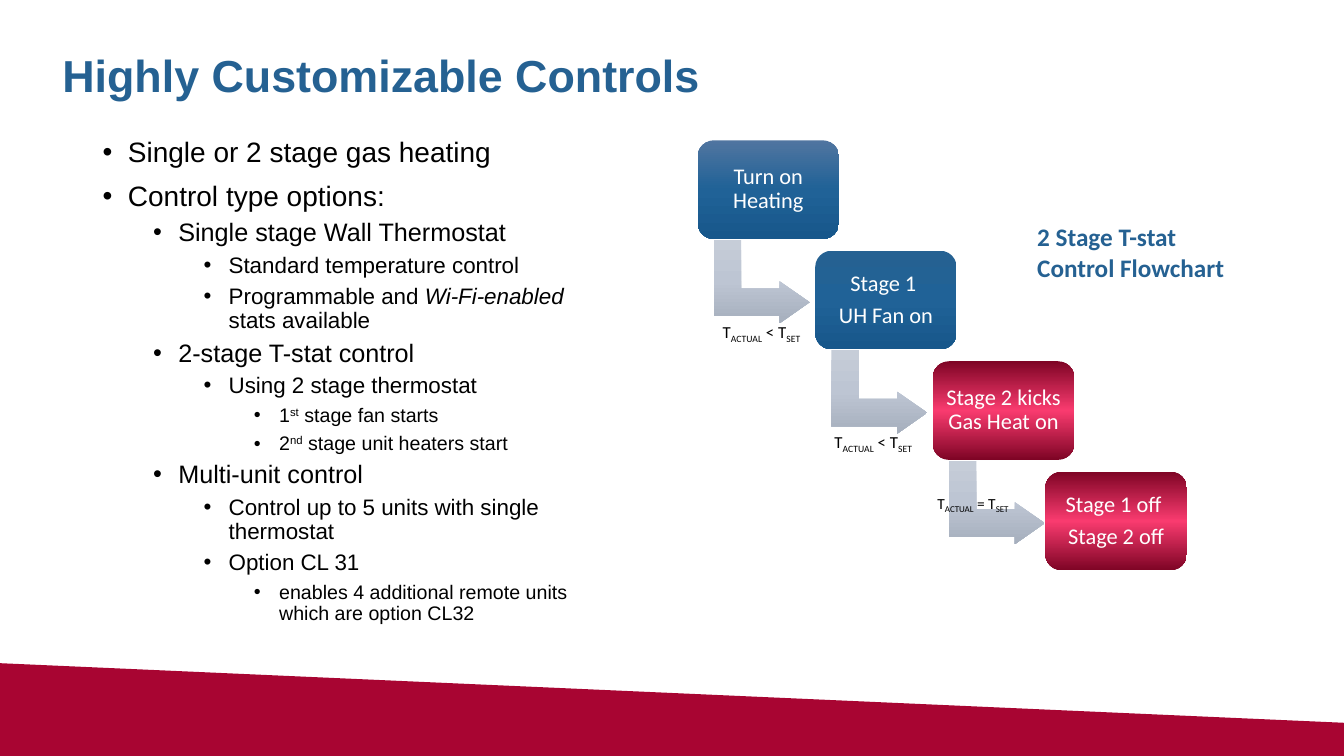
from copy import deepcopy

from lxml.etree import SubElement
from pptx import Presentation
from pptx.dml.color import RGBColor
from pptx.enum.shapes import MSO_SHAPE
from pptx.enum.text import MSO_ANCHOR, PP_ALIGN
from pptx.oxml.ns import qn
from pptx.util import Inches, Pt

NAVY = RGBColor(0x25, 0x61, 0x92)
CRIMSON = RGBColor(0xA8, 0x05, 0x32)
BLACK = RGBColor(0, 0, 0)
WHITE = RGBColor(0xFF, 0xFF, 0xFF)
MID = RGBColor(0x20, 0x62, 0x97)
DEEP = RGBColor(0x17, 0x57, 0x8B)
WINE = RGBColor(0x7E, 0x04, 0x25)
ROSE = RGBColor(0xF9, 0x3B, 0x6F)

START = (RGBColor(0x50, 0x75, 0xA0), MID, DEEP)
COOL = (NAVY, MID, DEEP)
HOT = (WINE, ROSE, WINE)
STEEL = (RGBColor(0xC6, 0xCD, 0xD8), RGBColor(0xBD, 0xC5, 0xD3),
         RGBColor(0xA6, 0xAF, 0xBD))

COLS, ROWS = 32, 18
SUPER, SUB = 30, -25

# Level and text; a part between bars takes the special style that follows.
POINTS = [
    (0, "Single or 2 stage gas heating", {}),
    (0, "Control type options:", {}),
    (1, "Single stage Wall Thermostat", {}),
    (2, "Standard temperature control", {}),
    (2, "Programmable and |Wi-Fi-enabled| stats available", {"italic": True}),
    (1, "2-stage T-stat control", {}),
    (2, "Using 2 stage thermostat", {}),
    (3, "1|st| stage fan starts", {"base": SUPER}),
    (3, "2|nd| stage unit heaters start", {"base": SUPER}),
    (1, "Multi-unit control", {}),
    (2, "Control up to 5 units with single thermostat", {}),
    (2, "Option CL 31", {}),
    (3, "enables 4 additional remote units which are option CL32", {}),
]

# Column, colours and lines of each stage
STAGES = [
    (16.61, START, ["Turn on Heating"]),
    (19.41, COOL, ["Stage 1 ", "UH Fan on"]),
    (22.21, HOT, ["Stage 2 kicks Gas Heat on"]),
    (24.89, HOT, ["Stage 1 off ", "Stage 2 off"]),
]

# Place, inset, text and size of each condition
LABELS = [
    ((17.04, 6.96, 4.25, 1.9), 0.07, "T|ACTUAL| < T|SET|", 12),
    ((19.7, 9.58, 2.45, 1.9), 0.07, "T|ACTUAL| < T|SET|", 12),
    ((22.2, 11.23, 2.18, 1.51), 0.05, "T|ACTUAL| = T|SET|", 11),
]


def write(par, text, size, color, font="Calibri", bold=False, special=None,
          align=PP_ALIGN.LEFT, line=0.9, before=0, after=0):
    """Fill a paragraph; parts between bars get the special style."""
    special = special or {}
    par.alignment = align
    par.line_spacing = line
    par.space_before = Pt(before)
    par.space_after = Pt(after)
    for nth, part in enumerate(text.split("|")):
        if not part:
            continue
        run = par.add_run()
        run.text = part
        run.font.name = font
        run.font.size = Pt(size)
        run.font.bold = bold
        run.font.color.rgb = color
        if nth % 2:
            run.font.italic = special.get("italic")
            if "base" in special:
                props = run.font._element
                props.set("baseline", str(special["base"] * 1000))


def shade(fill, colors):
    """Set a three-stop gradient that runs down the slide."""
    fill.gradient()
    fill.gradient_angle = 270
    grad = fill._xPr.find(qn("a:gradFill"))
    grad.set("rotWithShape", "0")
    stops = grad.find(qn("a:gsLst"))
    stops.append(deepcopy(stops[-1]))
    for nth, (stop, color) in enumerate(zip(fill.gradient_stops, colors)):
        stop.position = nth / 2
        stop.color.rgb = color


class Deck:
    """Holds the page grid, the styles and the current slide."""

    def __init__(self):
        self.prs = Presentation()
        self.prs.slide_width = Inches(13.333)
        self.prs.slide_height = Inches(7.5)
        self.slide = self.prs.slides.add_slide(self.prs.slide_layouts[6])
        self.shapes = self.slide.shapes

    def grid(self, x, y, *size):
        """Turn columns and rows into slide lengths."""
        wide = self.prs.slide_width / COLS
        high = self.prs.slide_height / ROWS
        units = (wide, high) * 2
        return [round(n * unit) for n, unit in zip((x, y, *size), units)]

    def frame(self, shape, inset=None, anchor=MSO_ANCHOR.TOP):
        frame = shape.text_frame
        frame.word_wrap = True
        frame.vertical_anchor = anchor
        if inset:
            frame.margin_left = frame.margin_right = Inches(inset)
            frame.margin_top = frame.margin_bottom = Inches(inset)
        return frame

    def text(self, place, text, size, color, inset=None,
             anchor=MSO_ANCHOR.TOP, **style):
        box = self.shapes.add_textbox(*self.grid(*place))
        frame = self.frame(box, inset, anchor)
        write(frame.paragraphs[0], text, size, color, **style)

    def band(self, points):
        """Draw the slanted foot of the slide."""
        first, *rest = [self.grid(*point) for point in points]
        form = self.shapes.build_freeform(*first)
        form.add_line_segments(rest, close=True)
        shape = form.convert_to_shape()
        shape.shadow.inherit = False
        shape.fill.solid()
        shape.fill.fore_color.rgb = CRIMSON
        shape.line.fill.background()

    def bullets(self, place, points):
        frame = self.frame(self.shapes.add_textbox(*self.grid(*place)))
        for nth, (level, text, special) in enumerate(points):
            par = frame.add_paragraph() if nth else frame.paragraphs[0]
            par.level = level
            props = par._p.get_or_add_pPr()
            props.set("marL", str(Inches(0.25 + 0.5 * level)))
            props.set("indent", str(-Inches(0.25)))
            SubElement(props, qn("a:buFont")).set("typeface", "Arial")
            SubElement(props, qn("a:buChar")).set("char", "•")
            gap = (5 if level else 10) if nth else 0
            write(par, text, 20 - 2 * level, BLACK, font="Arial",
                  special=special, before=gap)

    def block(self, kind, place, colors):
        shape = self.shapes.add_shape(kind, *self.grid(*place))
        shape.shadow.inherit = False
        shape.line.fill.background()
        shade(shape.fill, colors)
        return shape

    def stage(self, x, y, colors, lines):
        shape = self.block(MSO_SHAPE.ROUNDED_RECTANGLE,
                           (x, y, 3.37, 2.35), colors)
        frame = self.frame(shape, 0.07, MSO_ANCHOR.MIDDLE)
        for nth, text in enumerate(lines):
            par = frame.add_paragraph() if nth else frame.paragraphs[0]
            write(par, text, 16, WHITE, align=PP_ALIGN.CENTER, after=5.6)

    def arrow(self, x, y):
        shape = self.block(MSO_SHAPE.BENT_UP_ARROW, (x, y, 1.99, 2.28), STEEL)
        shape.rotation = 90
        for nth, share in enumerate((0.328, 0.25, 0.358)):
            shape.adjustments[nth] = share


def main():
    deck = Deck()
    deck.band([(32, 17.21), (0, 15.79), (0, 18), (32, 18)])
    deck.text((1.25, 0.77, 23.64, 2.16), "Highly Customizable Controls", 32,
              NAVY, font="Arial", bold=True, anchor=MSO_ANCHOR.MIDDLE)
    deck.bullets((2.21, 3.17, 11.83, 12.26), POINTS)
    for nth, (x, colors, lines) in enumerate(STAGES):
        y = 3.34 + 2.63 * nth
        if nth < len(STAGES) - 1:
            deck.arrow(x + 0.53, y + 2.22)
        deck.stage(x, y, colors, lines)
    for place, inset, text, size in LABELS:
        deck.text(place, text, size, BLACK, inset=inset, after=1.8,
                  anchor=MSO_ANCHOR.MIDDLE, special={"base": SUB})
    deck.text((24.46, 5.16, 5.11, 1.7), "2 Stage T-stat Control Flowchart",
              18, NAVY, bold=True, line=1.0)
    deck.prs.save("out.pptx")


if __name__ == "__main__":
    main()
